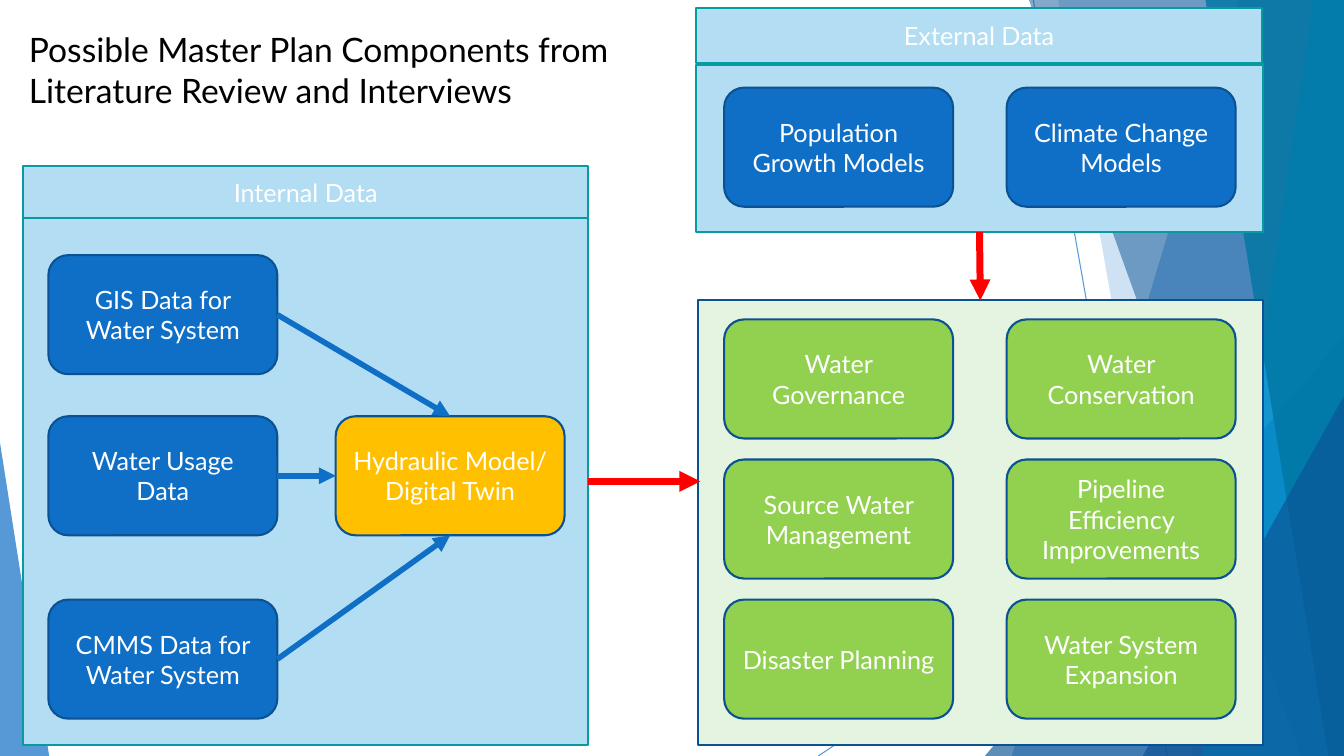
import pptx
import pptx.util
import pptx.dml.color
import pptx.enum.shapes
import pptx.enum.text
import pptx.oxml
import pptx.oxml.ns
from dataclasses import dataclass

Cm, Pt = pptx.util.Cm, pptx.util.Pt
Shape = pptx.enum.shapes.MSO_SHAPE
TOP, LEFT, BOTTOM, RIGHT = range(4)


@dataclass(frozen=True)
class Theme:
    font: str = "Lato"
    title_size: int = 24
    label_size: int = 18
    border: float = 1.5
    black: str = "000000"
    white: str = "FFFFFF"
    blue: str = "0F6FC6"
    navy: str = "0B5292"
    deep: str = "0B5394"
    cyan: str = "009DD9"
    ocean: str = "0076A3"
    teal: str = "089AA1"
    sky: str = "B3DDF2"
    mint: str = "E5F4E0"
    green: str = "92D050"
    amber: str = "FFC000"
    red: str = "FF0000"


theme = Theme()

# Content (lengths in cm)
WIDTH, HEIGHT = 33.87, 19.05
TITLE = "Possible Master Plan Components from Literature Review and Interviews"
TITLE_AT = (0.48, 0.61, 17.07, 2.31)

# Backdrop: thin lines, bands (top x, bottom x), triangles (box, apex)
BACK_LINES = [((26.04, 0), (29.41, HEIGHT)), ((WIDTH, 10.24), (20.62, HEIGHT))]
LOWER_BANDS = [(31.19, 25.5, theme.blue, 36), (26.67, 30.05, theme.blue, 20)]
UPPER_BANDS = [(25.93, 32.79, theme.deep, 50), (33.1, 30.28, theme.cyan, 70),
               (30.38, 33.48, theme.ocean, 80)]
LARGE_TRIANGLE = ((24.82, 8.46, 9.05, 10.59), 1, theme.deep, 66)
SMALL_TRIANGLES = [((28.8, 9.98, 5.07, 9.07), 1, theme.deep, 66),
                   ((0, 11.15, 1.24, 7.9), 0, theme.blue, 70)]

PANELS = {
    "external header": ((17.55, 0.2, 14.25, 1.4), theme.sky, theme.teal, "External Data"),
    "components": ((17.58, 7.57, 14.25, 11.2), theme.mint, theme.navy, ""),
    "external": ((17.55, 1.63, 14.27, 4.22), theme.sky, theme.teal, ""),
    "internal": ((0.58, 5.49, 14.25, 13.28), theme.sky, theme.teal, ""),
    "internal header": ((0.58, 4.19, 14.25, 1.3), theme.sky, theme.teal, "Internal Data"),
}

CARD_WIDTH, CARD_HEIGHT = 5.77, 3.0
SOURCE_X, MODEL_X = 1.22, 8.46
RIGHT_COLUMNS = (18.25, 25.37)
SOURCES = [("GIS Data for Water System", 6.43, TOP),
           ("Water Usage Data", 10.49, LEFT),
           ("CMMS Data for Water System", 15.11, BOTTOM)]
MODEL = ("Hydraulic Model/ Digital Twin", 10.49)
RIGHT_ROWS = [
    (2.21, theme.blue, ("Population Growth Models", "Climate Change Models")),
    (8.05, theme.green, ("Water Governance", "Water Conservation")),
    (11.58, theme.green, ("Source Water Management", "Pipeline Efficiency Improvements")),
    (15.11, theme.green, ("Disaster Planning", "Water System Expansion")),
]
INTERNAL_ARROW_END = (17.65, 12.13)

deck = pptx.Presentation()
deck.slide_width, deck.slide_height = Cm(WIDTH), Cm(HEIGHT)
page = deck.slides.add_slide(deck.slide_layouts[6])


def rgb(color):
    return pptx.dml.color.RGBColor.from_string(color)


def add_child(parent, tag, **attributes):
    child = pptx.oxml.parse_xml(f"<a:{tag} {pptx.oxml.ns.nsdecls('a')}/>")
    for name, value in attributes.items():
        child.set(name, str(value))
    parent.append(child)
    return child


def set_alpha(element, percent):
    color = element.find(".//" + pptx.oxml.ns.qn("a:srgbClr"))
    add_child(color, "alpha", val=percent * 1000)


def paint(shape, fill, border=None, alpha=None):
    shape.shadow.inherit = False
    shape.fill.solid()
    shape.fill.fore_color.rgb = rgb(fill)
    if alpha:
        set_alpha(shape.fill._xPr, alpha)
    if border:
        shape.line.color.rgb = rgb(border)
        shape.line.width = Pt(theme.border)
    else:
        shape.line.fill.background()


def write(box, text, size, color, align=None):
    box.text_frame.word_wrap = True
    para = box.text_frame.paragraphs[0]
    para.alignment = align
    span = para.add_run()
    span.text = text
    span.font.name = theme.font
    span.font.size = Pt(size)
    span.font.color.rgb = rgb(color)


def add_box(kind, place, fill, border, text=""):
    box = page.shapes.add_shape(kind, *map(Cm, place))
    paint(box, fill, border)
    if text:
        box.text_frame.vertical_anchor = pptx.enum.text.MSO_ANCHOR.MIDDLE
        write(box, text, theme.label_size, theme.white, pptx.enum.text.PP_ALIGN.CENTER)
    return box


def add_card(x, y, fill, text):
    return add_box(Shape.ROUNDED_RECTANGLE, (x, y, CARD_WIDTH, CARD_HEIGHT),
                   fill, theme.navy, text)


def add_line(start, end, color, width):
    line = page.shapes.add_connector(pptx.enum.shapes.MSO_CONNECTOR.STRAIGHT,
                                     *map(Cm, (*start, *end)))
    line.line.color.rgb = rgb(color)
    line.line.width = Pt(width)
    add_child(line._element.spPr, "effectLst")
    return line


def add_arrow(source, source_side, color, width, target=None, target_side=None, end=(0, 0)):
    arrow = add_line((0, 0), end, color, width)
    arrow.begin_connect(source, source_side)
    if target is not None:
        arrow.end_connect(target, target_side)
    add_child(arrow.line._get_or_add_ln(), "tailEnd", type="triangle")


def add_band(top_x, bottom_x, color, alpha):
    builder = page.shapes.build_freeform(Cm(top_x), 0)
    corners = [(WIDTH, 0), (WIDTH, HEIGHT), (bottom_x, HEIGHT)]
    builder.add_line_segments([(Cm(x), Cm(y)) for x, y in corners], close=True)
    paint(builder.convert_to_shape(), color, alpha=alpha)


def add_triangle(place, apex, color, alpha):
    triangle = page.shapes.add_shape(Shape.ISOSCELES_TRIANGLE, *map(Cm, place))
    triangle.adjustments[0] = apex
    paint(triangle, color, alpha=alpha)


# Backdrop
for start, end in BACK_LINES:
    set_alpha(add_line(start, end, theme.blue, 0.75)._element.spPr, 70)
for band in LOWER_BANDS:
    add_band(*band)
add_triangle(*LARGE_TRIANGLE)
for band in UPPER_BANDS:
    add_band(*band)
for triangle in SMALL_TRIANGLES:
    add_triangle(*triangle)

# Panels and title
panels = {name: add_box(Shape.RECTANGLE, *details) for name, details in PANELS.items()}
title = page.shapes.add_textbox(*map(Cm, TITLE_AT))
write(title, TITLE, theme.title_size, theme.black)

# Data sources feeding the model
model = add_card(MODEL_X, MODEL[1], theme.amber, MODEL[0])
for text, y, model_side in SOURCES:
    card = add_card(SOURCE_X, y, theme.blue, text)
    add_arrow(card, RIGHT, theme.blue, 4, model, model_side)

# External data and plan components
for y, fill, labels in RIGHT_ROWS:
    for x, text in zip(RIGHT_COLUMNS, labels):
        add_card(x, y, fill, text)

# Arrows between panels
add_arrow(panels["internal"], RIGHT, theme.red, 5, end=INTERNAL_ARROW_END)
add_arrow(panels["external"], BOTTOM, theme.red, 5, panels["components"], TOP)

deck.save("out.pptx")
